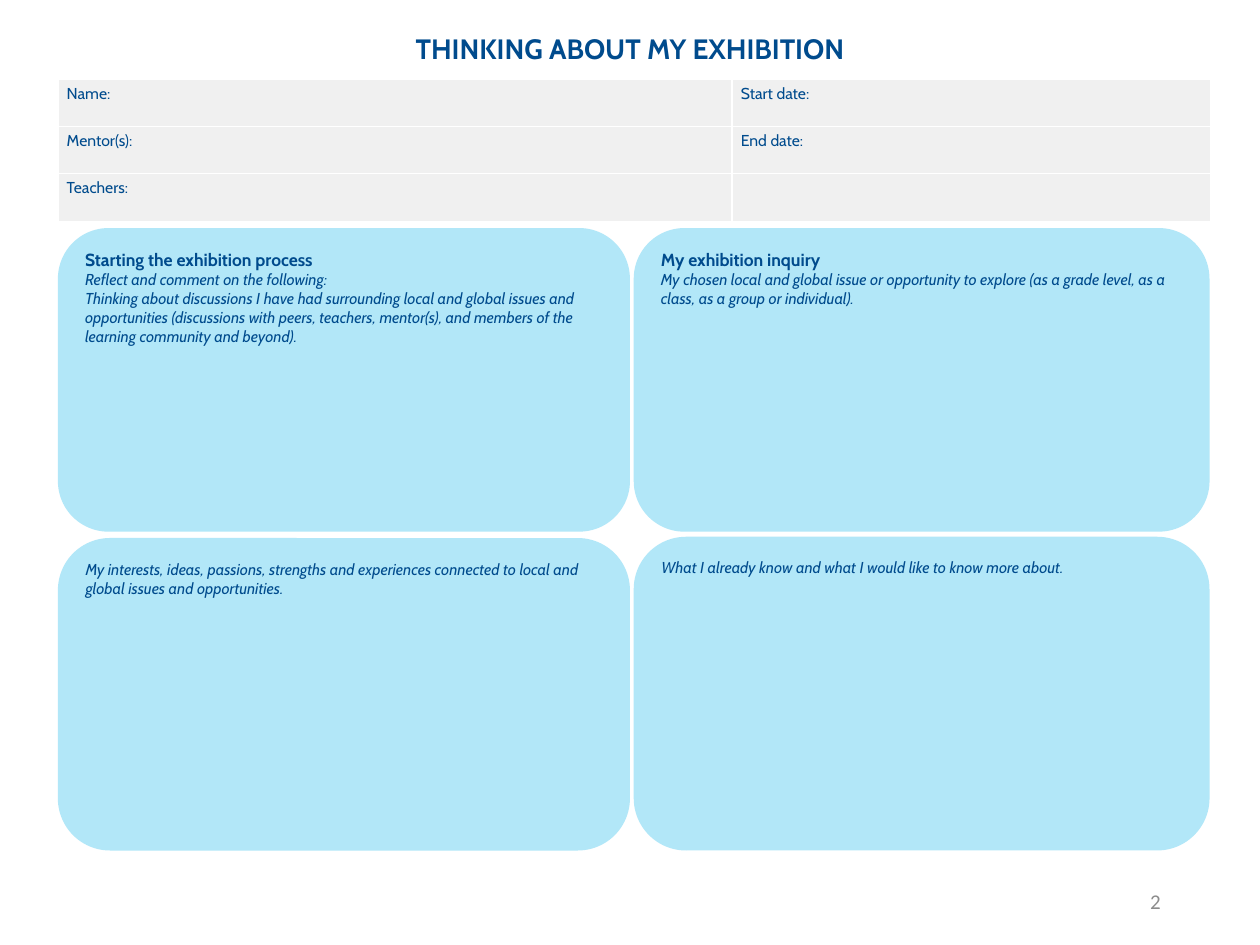
from lxml import etree
from pptx import Presentation
from pptx.dml.color import RGBColor
from pptx.enum.shapes import MSO_SHAPE
from pptx.enum.text import MSO_ANCHOR, PP_ALIGN
from pptx.oxml.ns import qn
from pptx.util import Inches, Pt

ROUND = MSO_SHAPE.ROUNDED_RECTANGLE
TOP, MIDDLE = MSO_ANCHOR.TOP, MSO_ANCHOR.MIDDLE
LEFT, CENTER, RIGHT = PP_ALIGN.LEFT, PP_ALIGN.CENTER, PP_ALIGN.RIGHT
COLORS = {"ink": "004B8D", "card": "B2E7F8", "cell": "F0F0F0",
          "rule": "FFFFFF", "page": "8C8C8C"}
FIELDS = [("Name:", "Start date:"), ("Mentor(s):", "End date:"), ("Teachers:", "")]
CARDS = [
    ((0.46, 1.81, 4.54, 2.41), "Starting the exhibition process",
     ["Reflect and comment on the following:",
      "Thinking about discussions I have had surrounding local and global issues "
      "and opportunities (discussions with peers, teachers, mentor(s), and members "
      "of the learning community and beyond)."]),
    ((0.46, 4.27, 4.54, 2.48), None,
     ["My interests, ideas, passions, strengths and experiences connected to local "
      "and global issues and opportunities."]),
    ((5.03, 1.81, 4.57, 2.41), "My exhibition inquiry",
     ["My chosen local and global issue or opportunity to explore (as a grade level, "
      "as a class, as a group or individual)."]),
    ((5.03, 4.26, 4.57, 2.49), None,
     ["What I already know and what I would like to know more about."]),
]


def color(key):
    """Return a named colour."""
    return RGBColor.from_string(COLORS[key])


def add_run(para, text, size, bold=False, italic=False, face="Cabin", ink="ink"):
    """Add one styled run to a paragraph."""
    run = para.add_run()
    run.text = text
    font = run.font
    font.name, font.size = face, Pt(size)
    font.bold, font.italic = bold, italic
    font.color.rgb = color(ink)


def add_title(slide, box):
    """Place the title in its box."""
    title = slide.shapes.title
    title.left, title.top, title.width, title.height = map(Inches, box)
    frame = title.text_frame
    frame.word_wrap = True
    frame.vertical_anchor = TOP
    para = frame.paragraphs[0]
    para.alignment = CENTER
    add_run(para, "THINKING ABOUT MY EXHIBITION", 16, bold=True)


def add_rules(cell):
    """Give a cell thin borders on all sides."""
    props = cell._tc.get_or_add_tcPr()
    for spot, side in enumerate(("a:lnL", "a:lnR", "a:lnT", "a:lnB")):
        line = etree.Element(qn(side), w=str(Pt(1)))
        fill = etree.SubElement(line, qn("a:solidFill"))
        etree.SubElement(fill, qn("a:srgbClr"), val=COLORS["rule"])
        props.insert(spot, line)


def add_fields(slide, box):
    """Place the table of names and dates."""
    table = slide.shapes.add_table(len(FIELDS), 2, *map(Inches, box)).table
    for col, width in zip(table.columns, (5.35, box[2] - 5.35)):
        col.width = Inches(width)
    for row, texts in zip(table.rows, FIELDS):
        row.height = Inches(box[3] / len(FIELDS))
        for cell, text in zip(row.cells, texts):
            cell.margin_left = cell.margin_right = Inches(0.07)
            cell.margin_top = cell.margin_bottom = Inches(0.04)
            cell.fill.solid()
            cell.fill.fore_color.rgb = color("cell")
            add_rules(cell)
            add_run(cell.text_frame.paragraphs[0], text, 9)


def add_card(slide, box, head, notes):
    """Place a rounded card with an optional heading and its prompts."""
    card = slide.shapes.add_shape(ROUND, *map(Inches, box))
    card.shadow.inherit = False
    card.fill.solid()
    card.fill.fore_color.rgb = color("card")
    card.line.fill.background()
    frame = card.text_frame
    frame.word_wrap = True
    frame.vertical_anchor = TOP
    lines = [(head, 10, True)] if head else []
    lines += [(note, 9, False) for note in notes]
    for spot, (text, size, bold) in enumerate(lines):
        para = frame.add_paragraph() if spot else frame.paragraphs[0]
        para.alignment = LEFT
        add_run(para, text, size, bold, not bold)


def add_page(slide, box):
    """Place the page number."""
    frame = slide.shapes.add_textbox(*map(Inches, box)).text_frame
    frame.word_wrap = True
    frame.vertical_anchor = MIDDLE
    para = frame.paragraphs[0]
    para.alignment = RIGHT
    add_run(para, "2", 12, face="Calibri", ink="page")


def main():
    """Build and save the slide."""
    deck = Presentation()
    deck.slide_width, deck.slide_height = Inches(10), Inches(7.5)
    slide = deck.slides.add_slide(deck.slide_layouts[5])
    add_page(slide, (7.06, 6.95, 2.25, 0.4))
    add_title(slide, (0, 0.2, 10, 0.37))
    for card in CARDS:
        add_card(slide, *card)
    add_fields(slide, (0.46, 0.63, 9.15, 1.12))
    deck.save("out.pptx")


if __name__ == "__main__":
    main()
